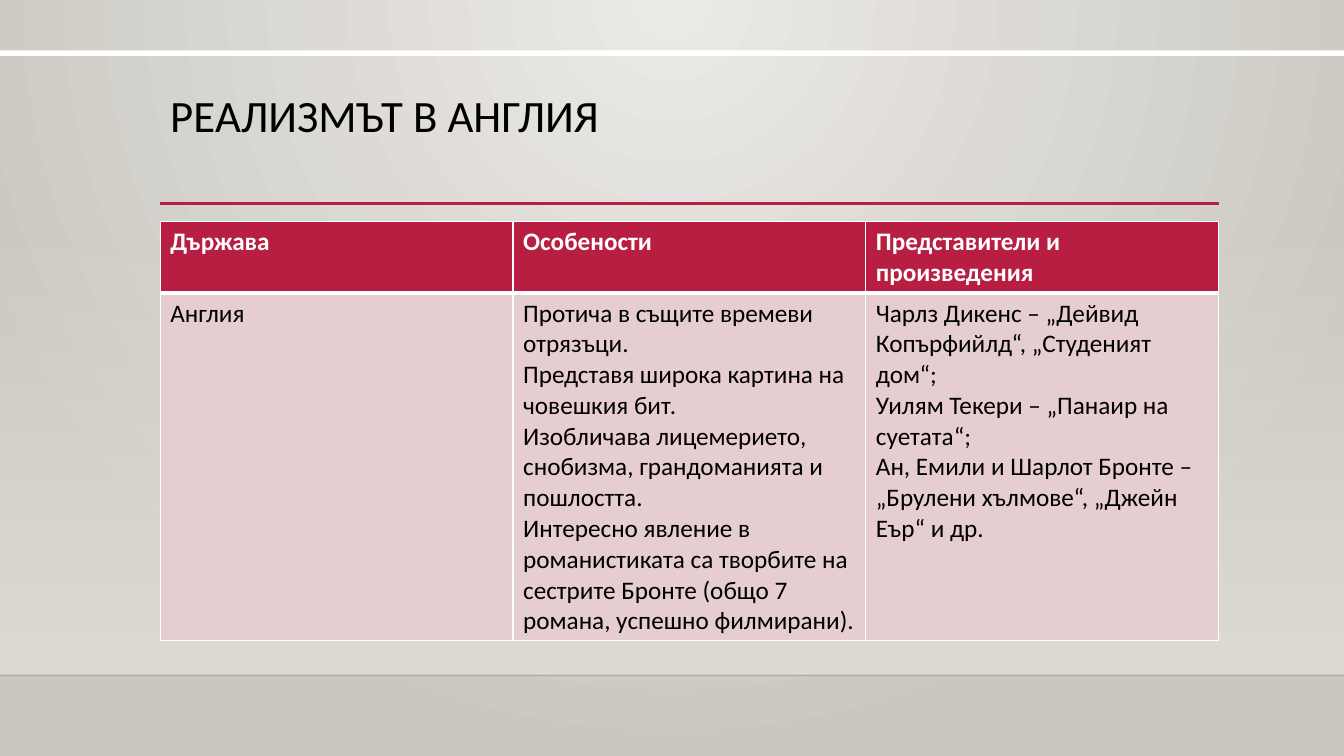
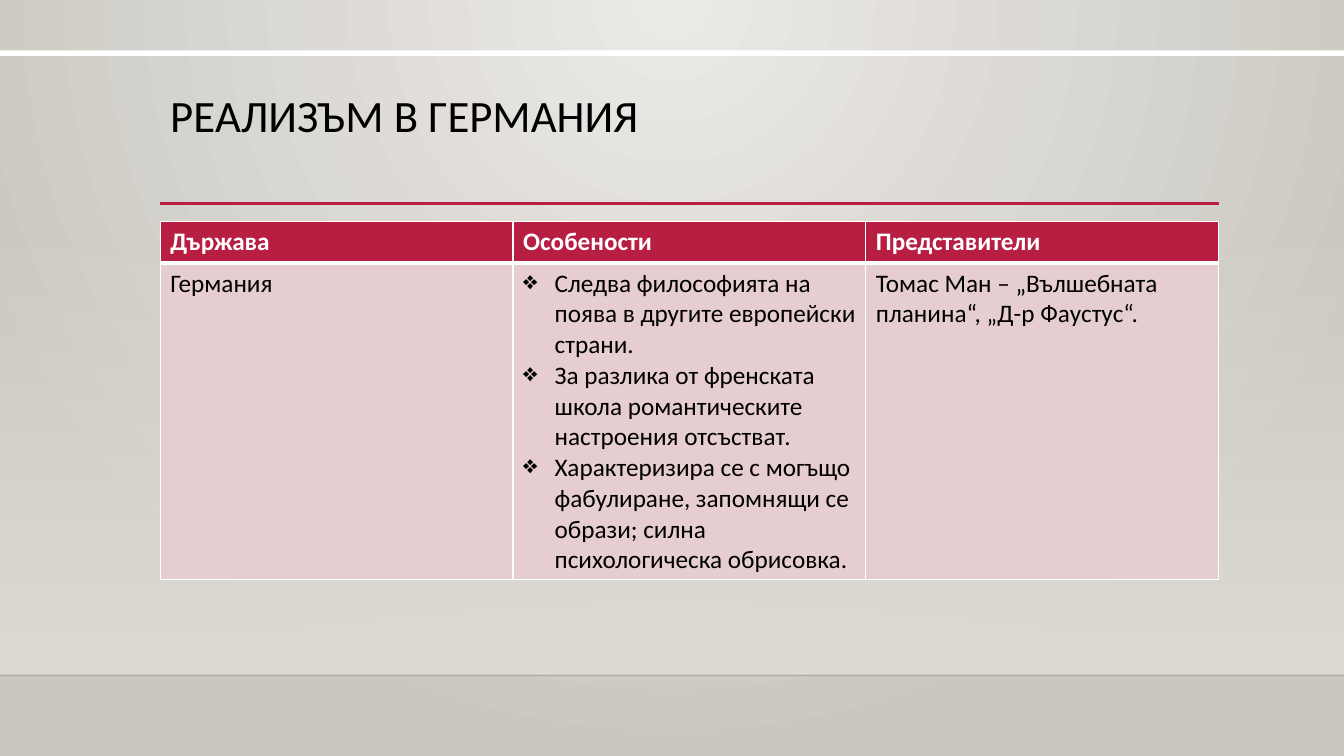
from dataclasses import dataclass
from typing import Any

from lxml import etree
from pptx import Presentation
from pptx.dml.color import RGBColor
from pptx.enum.shapes import MSO_CONNECTOR, MSO_SHAPE
from pptx.enum.text import MSO_ANCHOR
from pptx.oxml.ns import qn
from pptx.util import Pt

RECT = MSO_SHAPE.RECTANGLE
STRAIGHT = MSO_CONNECTOR.STRAIGHT
TOP = MSO_ANCHOR.TOP

# Colours
WHITE = RGBColor(0xFF, 0xFF, 0xFF)
BLACK = RGBColor(0x00, 0x00, 0x00)
EDGE = RGBColor(0x00, 0x00, 0x01)
CRIMSON = RGBColor(0xB7, 0x1E, 0x42)
PINK = RGBColor(0xE6, 0xCD, 0xCF)
SAND = RGBColor(0xDF, 0xDB, 0xD5)
BG_LIGHT = RGBColor(0xEC, 0xEA, 0xE7)
BG_DARK = RGBColor(0xCA, 0xC7, 0xC1)

# Layout, in points
SLIDE_W, SLIDE_H = 960, 540
LEFT, CONTENT_W = 114.5, 756
RULE_RIGHT = 871
TABLE_TOP = 158.4
FLOOR_Y = 482.4
BULLET_INDENT = 22.5

# Text formats
TITLE = {"name": "Calibri", "size": Pt(32), "bold": False}
HEAD = {"name": "Calibri", "size": Pt(18), "bold": True}
BODY = HEAD | {"bold": False}


@dataclass(frozen=True)
class Cell:
    paragraphs: tuple[str, ...]
    bullet: str = ""


@dataclass(frozen=True)
class CountrySlide:
    title: str
    headers: tuple[str, ...]
    cells: tuple[Cell, ...]
    row_heights: tuple[float, float]


SLIDES = (
    CountrySlide(
        "РЕАЛИЗМЪТ В АНГЛИЯ",
        ("Държава", "Особености", "Представители и произведения"),
        (
            Cell(("Англия",)),
            Cell((
                "Протича в същите времеви отрязъци.",
                "Представя широка картина на човешкия бит.",
                "Изобличава лицемерието, снобизма, грандоманията и пошлостта.",
                "Интересно явление в романистиката са творбите на сестрите "
                "Бронте (общо 7 романа, успешно филмирани).",
            )),
            Cell((
                "Чарлз Дикенс – „Дейвид Копърфийлд“, „Студеният дом“;",
                "Уилям Текери – „Панаир на суетата“;",
                "Ан, Емили и Шарлот Бронте – „Брулени хълмове“, „Джейн Еър“ и др.",
            )),
        ),
        (51, 248),
    ),
    CountrySlide(
        "РЕАЛИЗЪМ В ГЕРМАНИЯ",
        ("Държава", "Особености", "Представители"),
        (
            Cell(("Германия",)),
            Cell((
                "Следва философията на поява в другите европейски страни.",
                "За разлика от френската школа романтическите настроения отсъстват.",
                "Характеризира се с могъщо фабулиране, запомнящи се образи; "
                "силна психологическа обрисовка.",
            ), bullet="❖"),
            Cell(("Томас Ман – „Вълшебната планина“, „Д-р Фаустус“.",)),
        ),
        (29.5, 226),
    ),
)


def add_child(parent: Any, tag: str, **attrs: str) -> Any:
    return etree.SubElement(parent, qn(tag), attrs)


def set_alpha(color: Any, percent: int) -> None:
    add_child(color, "a:alpha", val=str(percent * 1000))


def set_gradient(fill: Any, *colors: RGBColor) -> None:
    fill.gradient()
    for stop, color in zip(fill.gradient_stops, colors):
        stop.color.rgb = color


def set_background(master: Any) -> None:
    """Circular gradient that spreads from the top centre."""
    set_gradient(master.background.fill, BG_LIGHT, BG_DARK)
    grad = next(master._element.iter(qn("a:gradFill")))
    grad.remove(grad.find(qn("a:lin")))
    circle = add_child(grad, "a:path", path="circle")
    add_child(circle, "a:fillToRect", l="43000", t="0", r="43000", b="100000")


def add_band(slide: Any, top: float, height: float) -> Any:
    sp = slide.shapes.add_shape(RECT, 0, Pt(top), Pt(SLIDE_W), Pt(height))
    sp.shadow.inherit = False
    sp.line.fill.background()
    return sp


def add_rule(slide: Any, x1: float, x2: float, y: float,
             color: RGBColor, width: float) -> Any:
    line = slide.shapes.add_connector(STRAIGHT, Pt(x1), Pt(y), Pt(x2), Pt(y))
    line.line.color.rgb = color
    line.line.width = Pt(width)
    add_child(line._element.spPr, "a:effectLst")
    return line


def add_decor(slide: Any) -> None:
    # Wall fading in towards the floor
    wall = add_band(slide, 159, FLOOR_Y - 159)
    set_gradient(wall.fill, SAND, SAND)
    wall.fill.gradient_angle = 270
    set_alpha(next(wall._element.iter(qn("a:srgbClr"))), 0)
    # Floor edge
    edge = add_rule(slide, 0, SLIDE_W, FLOOR_Y, EDGE, 1)
    set_alpha(next(edge._element.iter(qn("a:srgbClr"))), 20)
    # White top band and rule under the title
    band = add_band(slide, 36, 4)
    band.fill.solid()
    band.fill.fore_color.rgb = WHITE
    add_rule(slide, LEFT, RULE_RIGHT, 145.3, CRIMSON, 2.5)


def add_run(p: Any, text: str, fmt: dict[str, Any], color: RGBColor) -> None:
    r = p.add_run()
    r.text = text
    for name, value in fmt.items():
        setattr(r.font, name, value)
    r.font.color.rgb = color


def add_title(slide: Any, text: str) -> None:
    box = slide.shapes.add_textbox(Pt(LEFT), Pt(63.4), Pt(CONTENT_W), Pt(82.5))
    tf = box.text_frame
    tf.word_wrap = True
    tf.vertical_anchor = TOP
    p = tf.paragraphs[0]
    p.line_spacing = 0.9
    add_run(p, text, TITLE, BLACK)


def set_borders(cell: Any, top: float, bottom: float) -> None:
    tc_pr = cell._tc.get_or_add_tcPr()
    widths = {"a:lnL": 1, "a:lnR": 1, "a:lnT": top, "a:lnB": bottom}
    for i, (tag, width) in enumerate(widths.items()):
        ln = etree.Element(qn(tag), {"w": str(Pt(width))})
        fill = add_child(ln, "a:solidFill")
        add_child(fill, "a:srgbClr", val=str(WHITE))
        tc_pr.insert(i, ln)


def set_bullet(p: Any, char: str) -> None:
    p_pr = p._p.get_or_add_pPr()
    p_pr.set("marL", str(Pt(BULLET_INDENT)))
    p_pr.set("indent", str(-Pt(BULLET_INDENT)))
    add_child(p_pr, "a:buChar", char=char)


def fill_cell(cell: Any, content: Cell, fmt: dict[str, Any],
              color: RGBColor, fill: RGBColor) -> None:
    cell.fill.solid()
    cell.fill.fore_color.rgb = fill
    tf = cell.text_frame
    for i, text in enumerate(content.paragraphs):
        p = tf.add_paragraph() if i else tf.paragraphs[0]
        if content.bullet:
            set_bullet(p, content.bullet)
        add_run(p, text, fmt, color)


def add_country_table(slide: Any, data: CountrySlide) -> None:
    frame = slide.shapes.add_table(
        2, len(data.headers), Pt(LEFT), Pt(TABLE_TOP),
        Pt(CONTENT_W), Pt(sum(data.row_heights)))
    table = frame.table
    table.horz_banding = False
    for row, height in zip(table.rows, data.row_heights):
        row.height = Pt(height)
    for col, (header, content) in enumerate(zip(data.headers, data.cells)):
        head, body = table.cell(0, col), table.cell(1, col)
        fill_cell(head, Cell((header,)), HEAD, WHITE, CRIMSON)
        set_borders(head, top=1, bottom=3)
        fill_cell(body, content, BODY, BLACK, PINK)
        set_borders(body, top=3, bottom=1)


def main() -> None:
    prs = Presentation()
    prs.slide_width, prs.slide_height = Pt(SLIDE_W), Pt(SLIDE_H)
    set_background(prs.slide_master)
    blank = prs.slide_layouts[6]
    for data in SLIDES:
        slide = prs.slides.add_slide(blank)
        add_decor(slide)
        add_title(slide, data.title)
        add_country_table(slide, data)
    prs.save("out.pptx")


if __name__ == "__main__":
    main()
